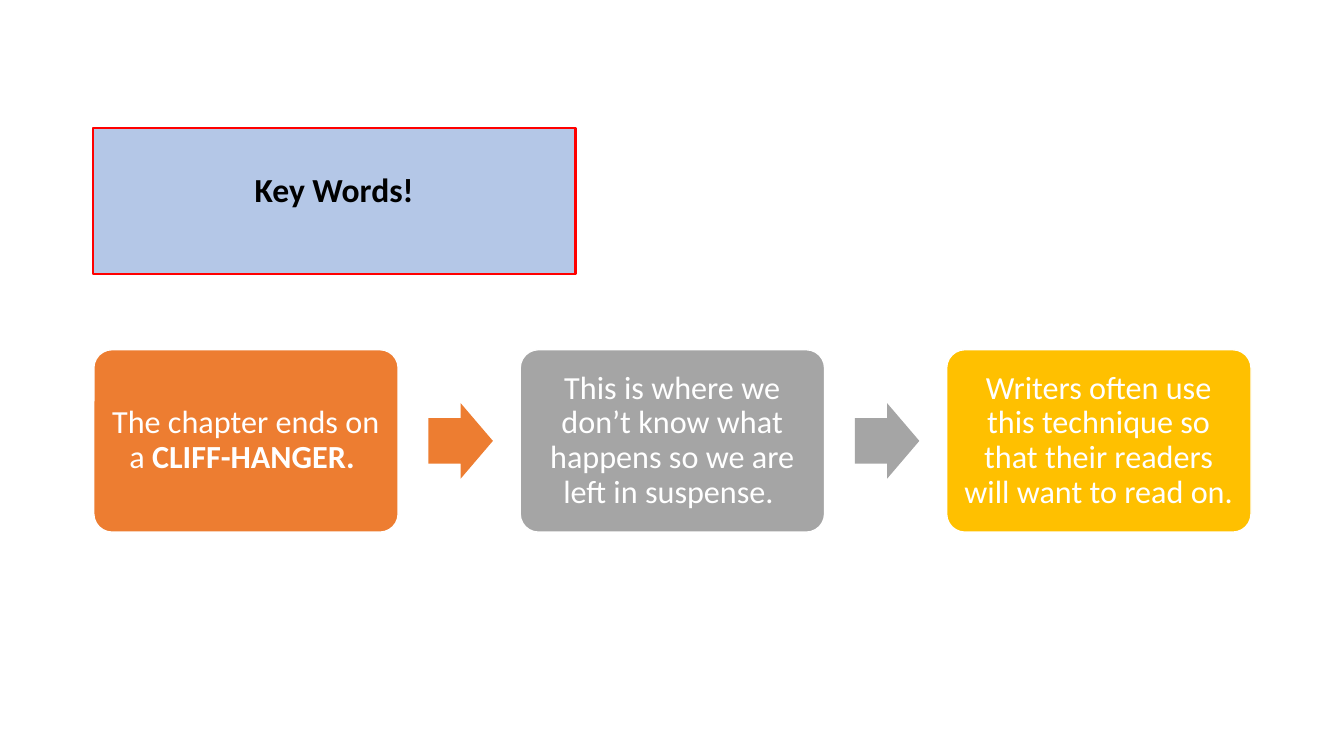
from pptx import Presentation
from pptx.dml.color import RGBColor
from pptx.enum.shapes import MSO_SHAPE
from pptx.enum.text import MSO_ANCHOR, PP_ALIGN
from pptx.util import Pt

RECTANGLE = MSO_SHAPE.RECTANGLE
ROUNDED = MSO_SHAPE.ROUNDED_RECTANGLE
ARROW = MSO_SHAPE.RIGHT_ARROW
MIDDLE = MSO_ANCHOR.MIDDLE
CENTER = PP_ALIGN.CENTER

# Each text is a list of (words, bold) runs.
HEADING = [("Key Words!", True)]
STEPS = [
    ("ED7D31", [("The chapter ends on a ", False), ("CLIFF-HANGER. ", True)]),
    ("A5A5A5", [("This is where we don’t know what happens so we are left in suspense. ", False)]),
    ("FFC000", [("Writers often use this technique so that their readers will want to read on. ", False)]),
]

THEME = {
    "font": "Calibri",
    "heading_size": 24,
    "step_size": 23,
    "heading_fill": "B4C7E7",
    "heading_line": "FF0000",
    "heading_text": "000000",
    "step_line": "FFFFFF",
    "step_text": "FFFFFF",
}

# Lengths in points
SLIDE_W, SLIDE_H = 960, 540
HEADING_BOX = (66.2, 91.4, 344.9, 104.4)
HEADING_INSETS = (7.2, 3.6, 7.2, 17)  # deeper bottom lifts the heading
STEP_LEFT, STEP_TOP, STEP_W, STEP_H = 67, 249.8, 217.4, 130.3
STEP_PITCH = 304.6
STEP_INSETS = (7.2, 7.2, 7.2, 7.2)
ARROW_W, ARROW_H = 46.1, 54
ARROW_OFFSET = 239


def add_block(slide, kind, box, fill, line=None, line_width=1):
    block = slide.shapes.add_shape(kind, *(Pt(length) for length in box))
    block.shadow.inherit = False
    block.fill.solid()
    block.fill.fore_color.rgb = RGBColor.from_string(fill)
    if line:
        block.line.color.rgb = RGBColor.from_string(line)
        block.line.width = Pt(line_width)
    else:
        block.line.fill.background()
    return block


def write(block, runs, size, color, insets):
    frame = block.text_frame
    frame.word_wrap = True
    frame.vertical_anchor = MIDDLE
    (frame.margin_left, frame.margin_top,
     frame.margin_right, frame.margin_bottom) = (Pt(inset) for inset in insets)
    paragraph = frame.paragraphs[0]
    paragraph.alignment = CENTER
    paragraph.line_spacing = 0.9
    paragraph.font.name = THEME["font"]
    paragraph.font.size = Pt(size)
    paragraph.font.color.rgb = RGBColor.from_string(color)
    for words, bold in runs:
        run = paragraph.add_run()
        run.text = words
        run.font.bold = bold


def main():
    deck = Presentation()
    deck.slide_width, deck.slide_height = Pt(SLIDE_W), Pt(SLIDE_H)
    slide = deck.slides.add_slide(deck.slide_layouts[6])

    heading = add_block(slide, RECTANGLE, HEADING_BOX,
                        THEME["heading_fill"], THEME["heading_line"], 1.5)
    write(heading, HEADING, THEME["heading_size"], THEME["heading_text"], HEADING_INSETS)

    arrow_top = STEP_TOP + (STEP_H - ARROW_H) / 2
    for index, (color, runs) in enumerate(STEPS):
        left = STEP_LEFT + index * STEP_PITCH
        step = add_block(slide, ROUNDED, (left, STEP_TOP, STEP_W, STEP_H),
                         color, THEME["step_line"])
        step.adjustments[0] = 0.1
        write(step, runs, THEME["step_size"], THEME["step_text"], STEP_INSETS)
        if index < len(STEPS) - 1:
            arrow = add_block(slide, ARROW,
                              (left + ARROW_OFFSET, arrow_top, ARROW_W, ARROW_H), color)
            arrow.adjustments[0] = 0.6
            arrow.adjustments[1] = 0.5

    deck.save("out.pptx")


if __name__ == "__main__":
    main()
